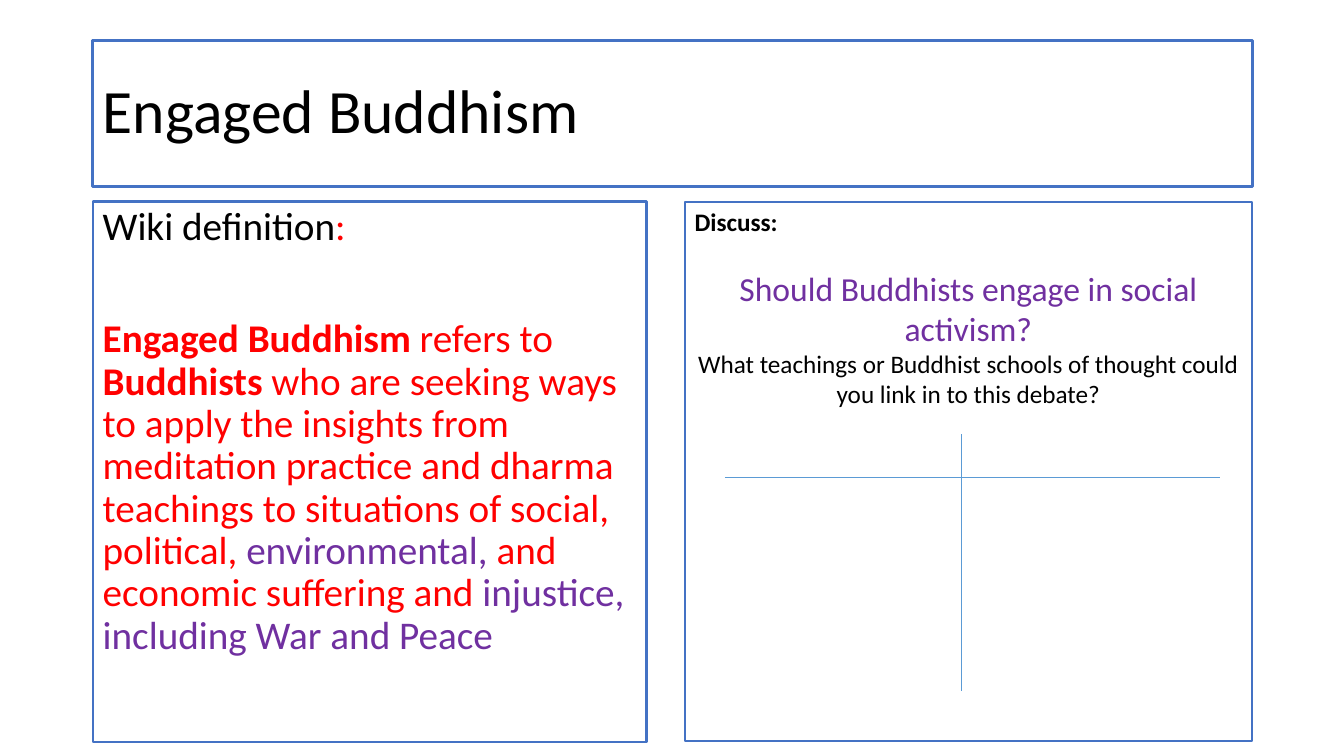
from pptx import Presentation, util as u
from pptx.dml.color import RGBColor
from pptx.enum import shapes, text
from pptx.oxml.xmlchemy import OxmlElement

PX = 9144  # EMU per px, 100 px to the inch
FONT = "Calibri"
BLACK, WHITE, RED, PURPLE = "000000", "FFFFFF", "FF0000", "7030A0"
FRAME_BLUE, RULE_BLUE = "4472C4", "5B9BD5"


def px(*lengths):
    return [u.Emu(length * PX) for length in lengths]


def color(value):
    return RGBColor.from_string(value)


def frame(box, width, anchor):
    """Outline a box and prepare its text frame."""
    box.line.color.rgb = color(FRAME_BLUE)
    box.line.width = u.Pt(width)
    body = box.text_frame
    body.word_wrap = True
    body.auto_size = text.MSO_AUTO_SIZE.NONE
    body.vertical_anchor = anchor


def add_panel(page, place, width):
    box = page.shapes.add_textbox(*px(*place))
    frame(box, width, text.MSO_ANCHOR.TOP)
    return box


def write(box, paragraphs):
    """Each paragraph: size, alignment, line spacing, space before, runs."""
    for index, (size, align, spacing, before, runs) in enumerate(paragraphs):
        body = box.text_frame
        para = body.add_paragraph() if index else body.paragraphs[0]
        para.alignment = align
        para.line_spacing = spacing
        para.space_before = u.Pt(before)
        for words, shade, bold in runs:
            span = para.add_run()
            span.text = words
            span.font.name = FONT
            span.font.size = u.Pt(size)
            span.font.bold = bold
            span.font.color.rgb = color(shade)


def add_rule(page, *ends):
    rule = page.shapes.add_connector(shapes.MSO_CONNECTOR.STRAIGHT, *px(*ends))
    rule.line.color.rgb = color(RULE_BLUE)
    rule.line.width = u.Pt(0.5)
    rule._element.spPr.append(OxmlElement("a:effectLst"))


def main():
    deck = Presentation()
    deck.slide_width, deck.slide_height = px(1333, 750)
    page = deck.slides.add_slide(deck.slide_layouts[5])
    left, center = text.PP_ALIGN.LEFT, text.PP_ALIGN.CENTER

    # Title
    title = page.shapes.title
    title.left, title.top, title.width, title.height = px(92, 40, 1150, 145)
    title.fill.solid()
    title.fill.fore_color.rgb = color(WHITE)
    frame(title, 2, text.MSO_ANCHOR.MIDDLE)
    write(title, [(44, left, 0.9, 0, [("Engaged Buddhism", BLACK, False)])])

    # Definition
    definition = add_panel(page, (92, 200, 549, 536), 1.75)
    write(definition, [
        (28, left, 0.9, 10, [("Wiki definition", BLACK, False), (":", RED, False)]),
        (28, left, 0.9, 50, [
            ("Engaged Buddhism", RED, True),
            (" refers to ", RED, False),
            ("Buddhists", RED, True),
            (" who are seeking ways to apply the insights from meditation practice "
             "and dharma teachings to situations of social, political, ", RED, False),
            ("environmental, ", PURPLE, False),
            ("and economic suffering and ", RED, False),
            ("injustice, including War and Peace", PURPLE, False),
        ]),
    ])

    # Discussion
    discussion = add_panel(page, (679, 200, 563, 535), 1.5)
    write(discussion, [
        (18, left, 1.0, 0, [("Discuss:", BLACK, True)]),
        (24, center, 1.0, 22,
         [("Should Buddhists engage in social activism?", PURPLE, False)]),
        (18, center, 1.0, 0,
         [("What teachings or Buddhist schools of thought could you link in "
           "to this debate?", BLACK, False)]),
    ])

    # Empty two-column chart for the debate
    add_rule(page, 719, 474, 1210, 474)
    add_rule(page, 954, 431, 954, 686)

    deck.save("out.pptx")


if __name__ == "__main__":
    main()
